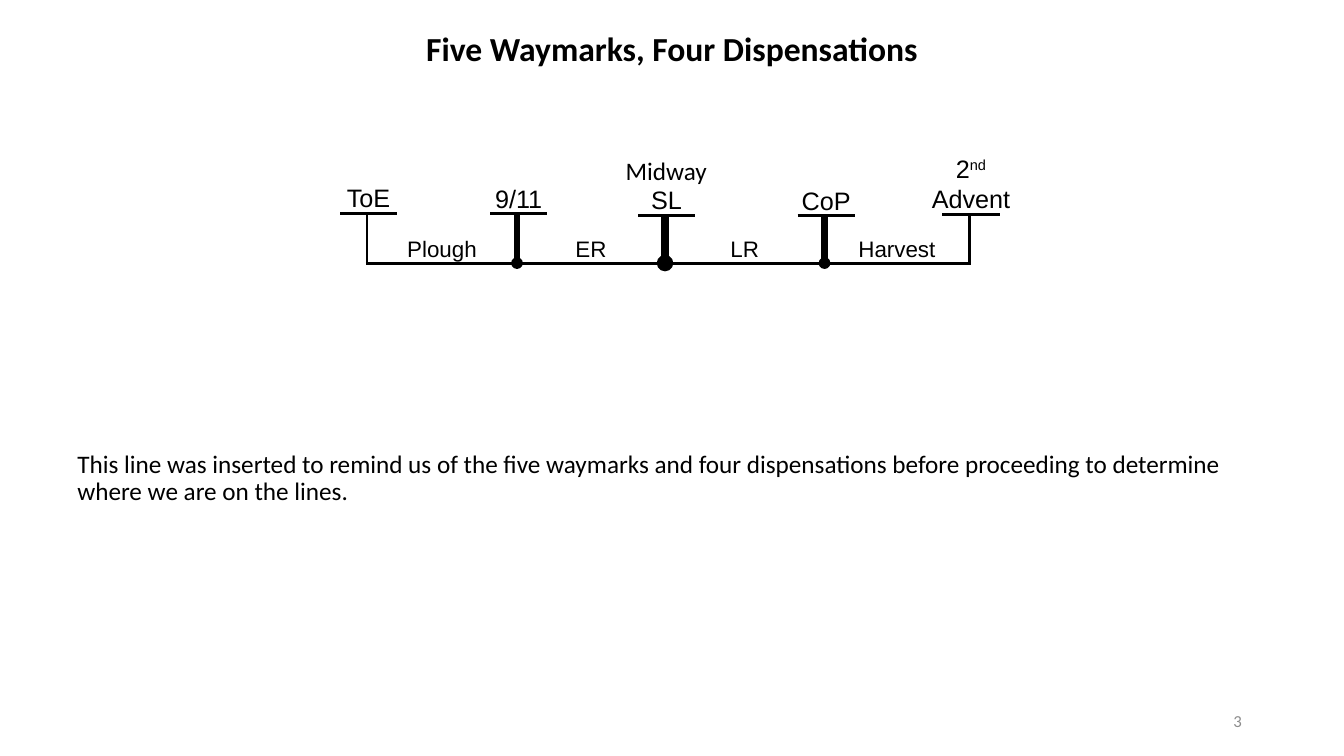
from itertools import pairwise

from pptx import Presentation
from pptx import util as u
from pptx.dml.color import RGBColor
from pptx.enum import shapes, text
from pptx.oxml.ns import qn
from lxml import etree

BLACK = "000000"
MID = text.PP_ALIGN.CENTER
LABEL_H = 0.91

# offset along the axis, tick height, label top, label lines, stem weight, dot size
MARKS = [
    (0.03, 1.62, 0.74, ["ToE"], 2, 0),
    (3.81, 1.62, 0.76, ["9/11"], 4.5, 0.26),
    (7.54, 1.68, 0.79, ["SL"], 6, 0.38),
    (11.56, 1.68, 0.81, ["CoP"], 4.5, 0.26),
    (15.21, 1.65, 0, ["2^nd", "Advent"], 2, 0),
]
SPANS = ["Plough", "ER", "LR", "Harvest"]


def color(code):
    return RGBColor.from_string(code)


def style(par, size, name="Calibri", code=BLACK, bold=False, **form):
    for key, val in form.items():
        setattr(par, key, val)
    for run in par.runs:
        font = run.font
        for key, val in dict(size=u.Pt(size), name=name, bold=bold).items():
            setattr(font, key, val)
        font.color.rgb = color(code)


def write(slide, box, lines, size, inset=0.1, wrap=False,
          anchor=text.MSO_ANCHOR.TOP, **form):
    """Add a text box; the part of a line after ^ is set as superscript."""
    frame = slide.shapes.add_textbox(*map(u.Cm, box)).text_frame
    for key, val in dict(word_wrap=wrap, vertical_anchor=anchor).items():
        setattr(frame, key, val)
    for side in ("left", "right", "top", "bottom"):
        setattr(frame, f"margin_{side}", u.Cm(inset))
    for i, line in enumerate(lines):
        par = frame.add_paragraph() if i else frame.paragraphs[0]
        base, _, sup = line.partition("^")
        par.add_run().text = base
        if sup:
            run = par.add_run()
            run.text = sup
            run.font._element.set("baseline", "30000")
        style(par, size, **form)


def rule(slide, x1, y1, x2, y2, weight=2):
    line = slide.shapes.add_connector(
        shapes.MSO_CONNECTOR.STRAIGHT, *map(u.Cm, (x1, y1, x2, y2)))
    line.line.color.rgb = color(BLACK)
    line.line.width = u.Pt(weight)
    etree.SubElement(line._element.spPr, qn("a:effectLst"))


def dot(slide, x, y, size):
    oval = slide.shapes.add_shape(
        shapes.MSO_SHAPE.OVAL,
        *map(u.Cm, (x - size / 2, y - size / 2, size, size)))
    oval.shadow.inherit = False
    oval.fill.solid()
    oval.fill.fore_color.rgb = color(BLACK)
    oval.line.color.rgb = color(BLACK)
    oval.line.width = u.Pt(1)


def label(slide, x, y, lines, size, name="Arial", width=2.3):
    box = (x - width / 2, y, width, LABEL_H * len(lines))
    write(slide, box, lines, size, name=name, alignment=MID)


def title(slide, box, words):
    head = slide.shapes.title
    for key, val in zip(("left", "top", "width", "height"), box):
        setattr(head, key, u.Cm(val))
    head.text_frame.text = words
    head.text_frame.vertical_anchor = text.MSO_ANCHOR.MIDDLE
    style(head.text_frame.paragraphs[0], 24, bold=True,
          alignment=MID, line_spacing=0.9)


def timeline(slide, box):
    left, top, width, height = box
    base = top + height
    rule(slide, left, base, left + width, base)
    for off, tick, high, lines, weight, size in MARKS:
        x, y = left + off, top + tick
        rule(slide, x - 0.68, y, x + 0.76, y)
        rule(slide, x, y, x, base, weight)
        if size:
            dot(slide, x, base, size)
        label(slide, x + 0.04, top + high, lines, 18)
    for name, (one, two) in zip(SPANS, pairwise(MARKS)):
        label(slide, left + (one[0] + two[0]) / 2, top + 2.06, [name], 16)
    label(slide, left + MARKS[2][0] + 0.03, top + 0.05, ["Midway"], 18, "Calibri")


def main():
    deck = Presentation()
    deck.slide_width, deck.slide_height = u.Cm(33.87), u.Cm(19.05)
    slide = deck.slides.add_slide(deck.slide_layouts[5])
    title(slide, (0, 0.79, 33.87, 0.97), "Five Waymarks, Four Dispensations")
    timeline(slide, (9.22, 3.76, 15.24, 2.87))
    write(slide, (1.7, 11.13, 30.43, 6.6),
          ["This line was inserted to remind us of the five waymarks and four "
           "dispensations before proceeding to determine where we are on the lines."],
          18, inset=0.25, wrap=True, line_spacing=0.9, space_before=u.Pt(10))
    write(slide, (23.93, 17.65, 7.62, 1.02), ["3"], 12, inset=0.25, wrap=True,
          anchor=text.MSO_ANCHOR.MIDDLE, code="8C8C8C",
          alignment=text.PP_ALIGN.RIGHT)
    deck.save("out.pptx")


if __name__ == "__main__":
    main()
